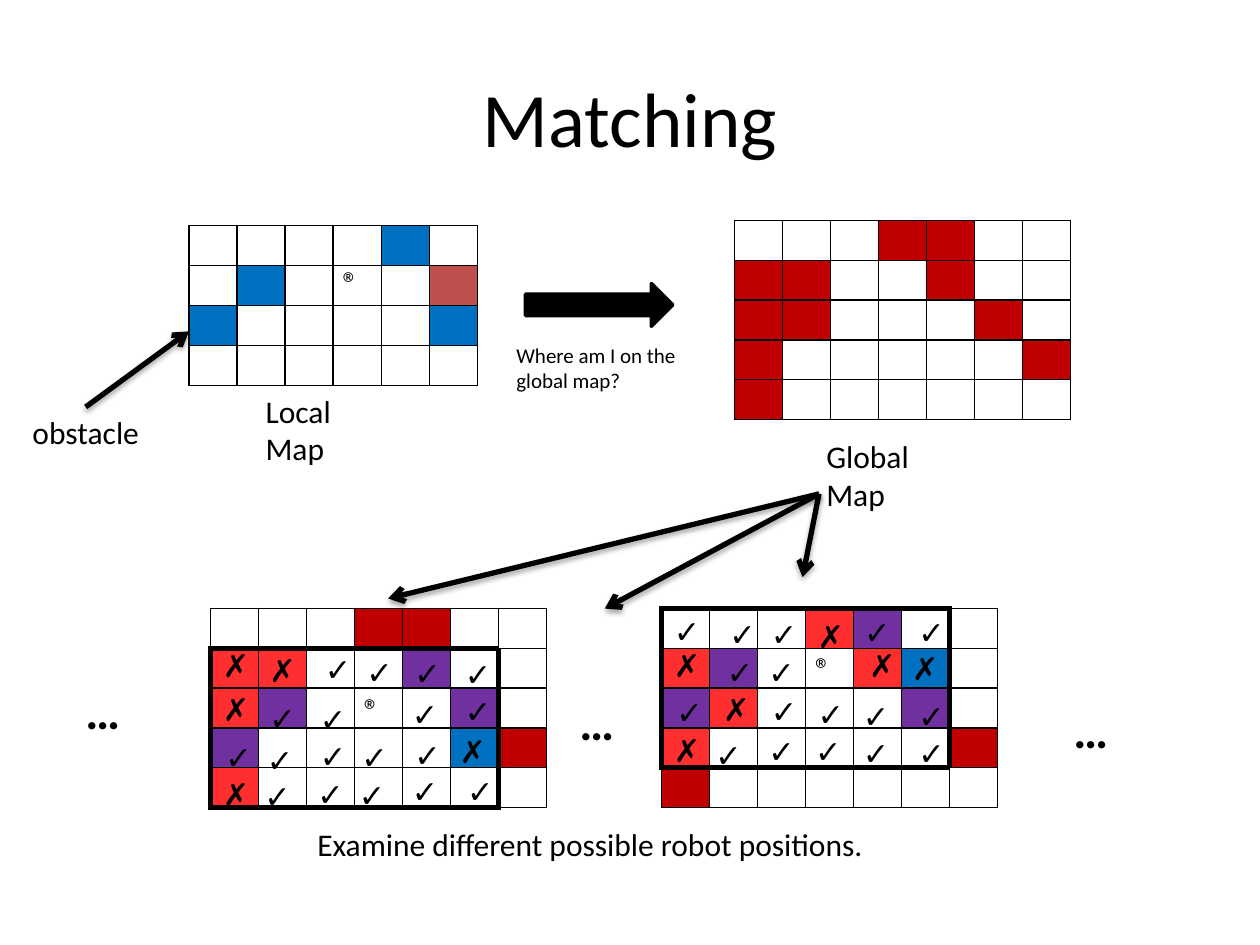
from lxml.etree import SubElement
from pptx import Presentation
from pptx.dml.color import RGBColor
from pptx.enum.shapes import MSO_CONNECTOR, MSO_SHAPE
from pptx.enum.text import MSO_ANCHOR, PP_ALIGN
from pptx.oxml import parse_xml
from pptx.oxml.ns import nsdecls, qn
from pptx.util import Inches, Pt

FONT = "Calibri"
COLORS = {
    "ink": "000000",
    "free": "FFFFFF",
    "local": "0070C0",
    "target": "C0504D",
    "global": "C00000",
    "mismatch": "FF2F2F",
    "match": "7030A0",
}
# Letters used in the map rows; a dot is an unfilled cell
CELL_COLORS = {"w": "free", "L": "local", "T": "target", "G": "global",
               "X": "mismatch", "M": "match"}

LOCAL_MAP = ["wwwwLw", "wLwwwT", "LwwwwL", "wwwwww"]
GLOBAL_MAP = ["...GG..", "GG..G..", "GG...G.", "G.....G", "G......"]
LOWER_CANDIDATE = ["...GG..", "XX..M..", "XM...M.", "M....LG", "X......"]
UPPER_CANDIDATE = ["...XM..", "XM..XL.", "MX...M.", "X.....G", "G......"]

MARK_WIDTHS = {"✓": 0.39, "✗": 0.36, "®": 0.39}
# Mark positions, measured from the top left corner of their map
LOCAL_MARKS = {"®": [(1.12, 0.25)]}
LOWER_MARKS = {
    "®": [(1.12, 0.6)],
    "✓": [(0.81, 0.28), (1.14, 0.3), (1.52, 0.31), (1.92, 0.32),
          (0.37, 0.67), (0.77, 0.68), (1.5, 0.64), (1.92, 0.61),
          (0.02, 0.98), (0.35, 1), (0.77, 0.97), (1.1, 0.98), (1.52, 0.96),
          (0.33, 1.29), (0.75, 1.27), (1.08, 1.28), (1.5, 1.25), (1.94, 1.25)],
    "✗": [(0, 0.25), (0.37, 0.29), (0, 0.6), (1.88, 0.93), (0, 1.27)],
}
UPPER_MARKS = {
    "®": [(1.12, 0.27)],
    "✓": [(0, -0.02), (0.44, 0), (0.77, 0), (1.51, -0.01), (1.94, -0.01),
          (0.42, 0.3), (0.75, 0.3),
          (0.02, 0.62), (0.77, 0.61), (1.14, 0.64), (1.5, 0.65), (1.94, 0.65),
          (0.33, 0.96), (0.75, 0.93), (1.12, 0.93), (1.5, 0.95), (1.94, 0.95)],
    "✗": [(1.14, 0.02), (0, 0.25), (1.55, 0.25), (1.89, 0.27), (0.39, 0.6), (0, 0.92)],
}


def rgb(name):
    return RGBColor.from_string(COLORS[name])


def style_font(paragraph, size, bold=False):
    font = paragraph.font
    font.name, font.size, font.bold = FONT, Pt(size), bold
    font.color.rgb = rgb("ink")


def add_label(slide, box, text, size=18, bold=False, wrap=False, margin_right=0.1):
    label = slide.shapes.add_textbox(*map(Inches, box))
    frame = label.text_frame
    frame.word_wrap = wrap
    frame.margin_right = Inches(margin_right)
    paragraph = frame.paragraphs[0]
    paragraph.text = text
    style_font(paragraph, size, bold)


def add_arrow(slide, start, end):
    """Thick line with an open head and a soft shadow below."""
    arrow = slide.shapes.add_connector(MSO_CONNECTOR.STRAIGHT, *map(Inches, start + end))
    arrow.line.color.rgb = rgb("ink")
    arrow.line.width = Pt(3)
    SubElement(arrow.line._get_or_add_ln(), qn("a:tailEnd"), type="arrow")
    arrow._element.spPr.append(parse_xml(
        f'<a:effectLst {nsdecls("a")}>'
        '<a:outerShdw blurRad="40000" dist="23000" dir="5400000" rotWithShape="0">'
        f'<a:srgbClr val="{COLORS["ink"]}"><a:alpha val="35000"/></a:srgbClr>'
        '</a:outerShdw></a:effectLst>'))


def set_borders(cell, widths):
    """Draw the left, right, top and bottom borders in the given points."""
    properties = cell._tc.get_or_add_tcPr()
    for position, (side, width) in enumerate(zip("LRTB", widths)):
        properties.insert(position, parse_xml(
            f'<a:ln{side} {nsdecls("a")} w="{Pt(width)}"><a:solidFill>'
            f'<a:srgbClr val="{COLORS["ink"]}"/></a:solidFill></a:ln{side}>'))


def border_widths(row, column, window):
    """3 pt on the outline of the window of cells, 1 pt elsewhere."""
    if window is None:
        return [1] * 4
    top, bottom, left, right = window

    def inside(r, c):
        return top <= r <= bottom and left <= c <= right

    neighbours = [(row, column - 1), (row, column + 1), (row - 1, column), (row + 1, column)]
    return [3 if inside(row, column) != inside(*near) else 1 for near in neighbours]


def add_map(slide, box, rows, marks, window=None):
    """Occupancy grid with its marks; window outlines the compared cells."""
    left, top, width, height = box
    grid = slide.shapes.add_table(len(rows), len(rows[0]), *map(Inches, box)).table
    grid.first_row = grid.horz_banding = False
    for column in grid.columns:
        column.width = Inches(width / len(rows[0]))
    for row in grid.rows:
        row.height = Inches(height / len(rows))
    for r, codes in enumerate(rows):
        for c, code in enumerate(codes):
            cell = grid.cell(r, c)
            cell.margin_top = cell.margin_bottom = 0
            if code in CELL_COLORS:
                cell.fill.solid()
                cell.fill.fore_color.rgb = rgb(CELL_COLORS[code])
            else:
                cell.fill.background()
            set_borders(cell, border_widths(r, c, window))
    for mark, places in marks.items():
        for x, y in places:
            add_label(slide, (left + x, top + y, MARK_WIDTHS[mark], 0.4), mark)


def add_title(slide, box):
    title = slide.shapes.title
    title.left, title.top, title.width, title.height = map(Inches, box)
    title.text_frame.vertical_anchor = MSO_ANCHOR.MIDDLE
    paragraph = title.text_frame.paragraphs[0]
    paragraph.text = "Matching"
    paragraph.alignment = PP_ALIGN.CENTER
    style_font(paragraph, 44)


def add_local_map(slide, box):
    left, top = box[:2]
    add_map(slide, box, LOCAL_MAP, LOCAL_MARKS)
    add_label(slide, (left + 0.51, top + 1.27, 1.24, 0.4), "Local Map", wrap=True, margin_right=0.4)
    add_label(slide, (left - 1.34, top + 1.44, 1.04, 0.4), "obstacle", wrap=True, margin_right=0)
    add_arrow(slide, (left - 0.82, top + 1.44), (left, top + 0.84))


def add_question(slide, box):
    left, top, width, height = box
    arrow = slide.shapes.add_shape(MSO_SHAPE.RIGHT_ARROW, *map(Inches, box))
    arrow.shadow.inherit = False
    arrow.fill.solid()
    arrow.fill.fore_color.rgb = arrow.line.color.rgb = rgb("ink")
    arrow.line.width = Pt(2)
    add_label(slide, (left - 0.17, top + 0.42, width + 0.5, 0.5),
              "Where am I on the global map?", 12, wrap=True)


def add_global_map(slide, box):
    left, top = box[:2]
    add_map(slide, box, GLOBAL_MAP, {})
    add_label(slide, (left + 0.63, top + 1.67, 1.37, 0.4), "Global Map", wrap=True, margin_right=0.4)
    for end in [(6.37, 4.58), (4.8, 4.83), (3.08, 4.75)]:
        add_arrow(slide, (left + 0.67, top + 2.17), end)


def add_candidates(slide, box):
    """Two placements of the local map, with ellipses around them."""
    left, top, width, height = box
    add_map(slide, box, LOWER_CANDIDATE, LOWER_MARKS, (1, 4, 0, 5))
    add_map(slide, (left + 3.58, top, width, height), UPPER_CANDIDATE, UPPER_MARKS, (0, 3, 0, 5))
    for x, y in [(-1.09, 0.52), (2.83, 0.61), (6.75, 0.67)]:
        add_label(slide, (left + x, top + y, 0.59, 0.57), "…", 28, bold=True)
    add_label(slide, (left + 0.75, top + 1.67, 4.57, 0.4),
              "Examine different possible robot positions.")


def main():
    deck = Presentation()
    deck.slide_width, deck.slide_height = Inches(10), Inches(7.5)
    slide = deck.slides.add_slide(deck.slide_layouts[5])
    add_title(slide, (0.5, 0.3, 9, 1.25))
    add_local_map(slide, (1.5, 1.79, 2.29, 1.27))
    add_question(slide, (4.17, 2.25, 1.17, 0.34))
    add_global_map(slide, (5.83, 1.75, 2.67, 1.58))
    add_candidates(slide, (1.67, 4.83, 2.67, 1.58))
    deck.save("out.pptx")


if __name__ == "__main__":
    main()
